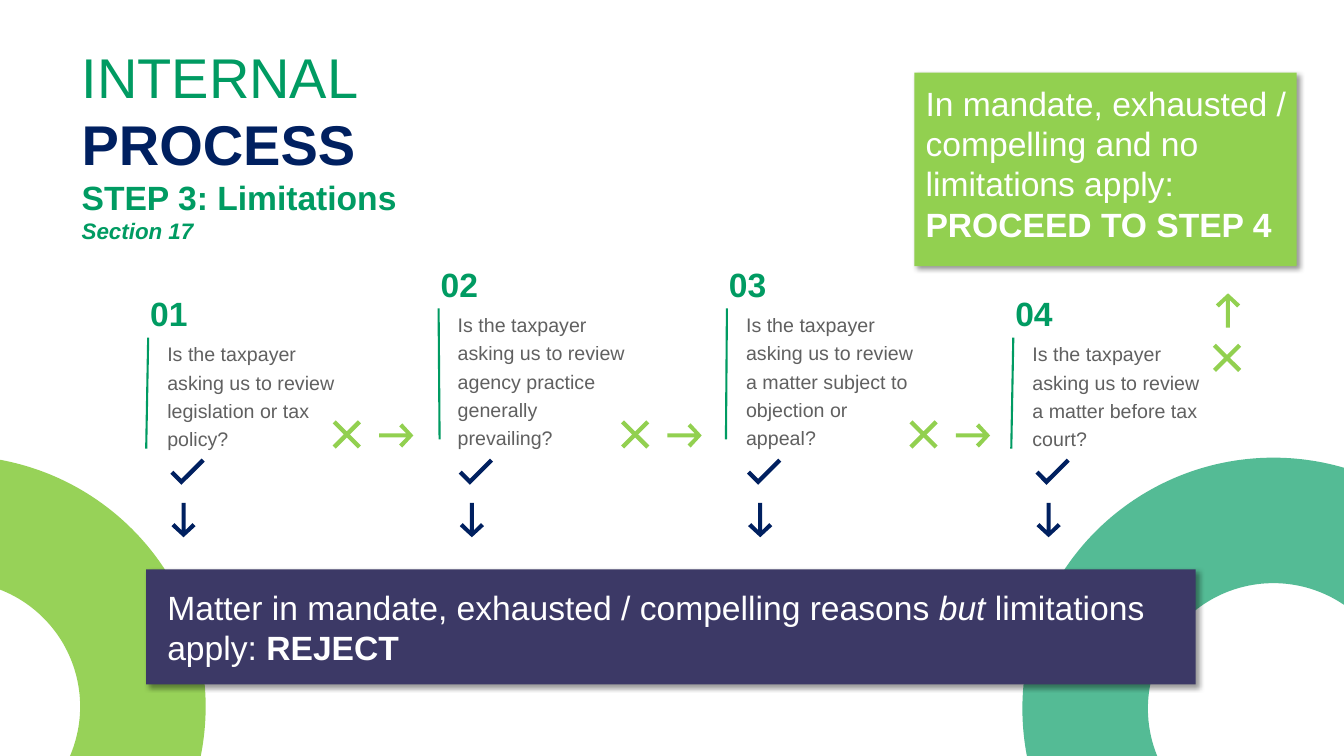
import pptx
import pptx.dml.color
import pptx.enum.dml
import pptx.enum.shapes
import pptx.enum.text
import pptx.oxml
import pptx.oxml.ns
import pptx.util
from pptx.util import Inches

RGBColor = pptx.dml.color.RGBColor
SHAPES = pptx.enum.shapes.MSO_SHAPE
ANCHOR = pptx.enum.text.MSO_ANCHOR

LIME = RGBColor(0x92, 0xD0, 0x50)
GREEN = RGBColor(0x00, 0x9B, 0x62)
NAVY = RGBColor(0x00, 0x20, 0x60)
PURPLE = RGBColor(0x3C, 0x39, 0x66)
INK = RGBColor(0x1D, 0x1D, 0x1D)
WHITE = RGBColor(0xFF, 0xFF, 0xFF)

# Icon outlines, in inches from the icon's centre; the arrow points right.
CROSS = [(0.14, -0.11), (0.11, -0.14), (0, -0.03), (-0.11, -0.14),
         (-0.14, -0.11), (-0.03, 0), (-0.14, 0.11), (-0.11, 0.14),
         (0, 0.03), (0.11, 0.14), (0.14, 0.11), (0.03, 0)]
ARROW = [(-0.17, 0.02), (0.1, 0.02), (0.03, 0.09), (0.06, 0.12), (0.17, 0),
         (0.06, -0.12), (0.03, -0.09), (0.1, -0.02), (-0.17, -0.02)]
CHECK = [(-0.06, 0.07), (-0.14, -0.01), (-0.17, 0.02), (-0.06, 0.13),
         (0.17, -0.1), (0.14, -0.13)]

ICON_PITCH = 2.86

# Number, question, left, top, foot of the rule, sideways lean of the rule
STEPS = [
    ("01", "Is the taxpayer asking us to review legislation or tax policy?",
     1.49, 2.93, 4.45, -0.02),
    ("02", "Is the taxpayer asking us to review agency practice generally prevailing?",
     4.37, 2.64, 4.36, 0.01),
    ("03", "Is the taxpayer asking us to review a matter subject to objection or appeal?",
     7.23, 2.64, 4.36, -0.01),
    ("04", "Is the taxpayer asking us to review a matter before tax court?",
     10.07, 2.93, 4.45, -0.02),
]


def set_opacity(fill, percent):
    color = fill._xPr.find(".//" + pptx.oxml.ns.qn("a:srgbClr"))
    color.append(pptx.oxml.parse_xml(
        f'<a:alpha {pptx.oxml.ns.nsdecls("a")} val="{percent * 1000}"/>'))


def add_text(slide, box, paragraphs, size=24, color=WHITE, bold=False,
             opacity=None, spacing=None, anchor=ANCHOR.TOP,
             insets=(0, 0, 0.1, 0)):
    """Each paragraph is a list of (text, overrides) runs."""
    frame = slide.shapes.add_textbox(*map(Inches, box)).text_frame
    frame.word_wrap = True
    frame.auto_size = pptx.enum.text.MSO_AUTO_SIZE.SHAPE_TO_FIT_TEXT
    frame.vertical_anchor = anchor
    (frame.margin_left, frame.margin_top,
     frame.margin_right, frame.margin_bottom) = map(Inches, insets)
    for index, runs in enumerate(paragraphs):
        paragraph = frame.paragraphs[0] if index == 0 else frame.add_paragraph()
        if spacing:
            paragraph.line_spacing = spacing
        for text, overrides in runs:
            run = paragraph.add_run()
            run.text = text
            font = run.font
            font.name = "Arial"
            font.size = pptx.util.Pt(overrides.get("size", size))
            font.bold = overrides.get("bold", bold)
            font.italic = overrides.get("italic", False)
            font.fill.solid()
            font.fill.fore_color.rgb = overrides.get("color", color)
            if opacity:
                set_opacity(font.fill, opacity)


def paint(shape, color):
    shape.shadow.inherit = False
    shape.fill.solid()
    shape.fill.fore_color.rgb = color
    shape.line.fill.background()


def add_ring(slide, left, top, color, opacity):
    ring = slide.shapes.add_shape(SHAPES.DONUT, Inches(left), Inches(top),
                                  Inches(4.98), Inches(4.98))
    paint(ring, color)
    set_opacity(ring.fill, opacity)


def add_panel(slide, box, color):
    """Rectangle with a soft shadow to the lower right."""
    panel = slide.shapes.add_shape(SHAPES.RECTANGLE, *map(Inches, box))
    paint(panel, color)
    effects = panel._element.spPr.find(pptx.oxml.ns.qn("a:effectLst"))
    effects.append(pptx.oxml.parse_xml(
        f'<a:outerShdw {pptx.oxml.ns.nsdecls("a")} blurRad="50800" dist="38100" '
        'dir="2700000" algn="tl" rotWithShape="0"><a:srgbClr val="000000">'
        '<a:alpha val="40000"/></a:srgbClr></a:outerShdw>'))


def add_icon(slide, outline, x, y, color, rotation=0):
    points = [(Inches(x + dx), Inches(y + dy)) for dx, dy in outline]
    builder = slide.shapes.build_freeform(*points[0])
    builder.add_line_segments(points[1:], close=True)
    icon = builder.convert_to_shape()
    paint(icon, color)
    icon.rotation = rotation


def add_rule(slide, *ends):
    rule = slide.shapes.add_connector(
        pptx.enum.shapes.MSO_CONNECTOR.STRAIGHT, *map(Inches, ends))
    rule.line.color.rgb = GREEN
    rule.line.width = pptx.util.Pt(1.5)
    rule._element.spPr.append(pptx.oxml.parse_xml(
        f'<a:effectLst {pptx.oxml.ns.nsdecls("a")}/>'))


def add_step(slide, number, question, left, top, rule_foot, lean):
    question_top = top + 0.42
    add_text(slide, (left, top, 2.05, 0.42), [[(number, {})]], color=GREEN,
             bold=True, spacing=0.8, anchor=ANCHOR.BOTTOM,
             insets=(0, 0.05, 0.1, 0.05))
    add_text(slide, (left + 0.17, question_top, 1.84, rule_foot - question_top),
             [[(question, {})]], size=14, color=INK, opacity=70, spacing=1.2)
    add_rule(slide, left - 0.02, question_top, left - 0.02 + lean, rule_foot)


def main():
    deck = pptx.Presentation()
    deck.slide_width, deck.slide_height = Inches(13.33), Inches(7.5)
    slide = deck.slides.add_slide(deck.slide_layouts[6])

    add_ring(slide, -2.94, 4.52, LIME, 95)
    add_ring(slide, 10.14, 4.54, GREEN, 67)
    add_text(slide, (0.81, 0.4, 3.32, 2.02), [
        [("INTERNAL ", {"size": 40, "bold": False}),
         ("PROCESS", {"size": 40, "color": NAVY})],
        [("STEP 3: Limitations", {})],
        [("Section 17", {"size": 16, "italic": True})],
    ], color=GREEN, bold=True, anchor=ANCHOR.BOTTOM, insets=(0, 0, 0, 0))

    for index, step in enumerate(STEPS):
        add_step(slide, *step)
        shift = index * ICON_PITCH
        if index < len(STEPS) - 1:
            add_icon(slide, CROSS, 3.44 + shift, 4.31, LIME)
            add_icon(slide, ARROW, 3.93 + shift, 4.32, LIME)
        add_icon(slide, ARROW, 1.82 + shift, 5.16, NAVY, rotation=90)
        add_icon(slide, CHECK, 1.86 + shift, 4.68, NAVY)
    add_icon(slide, CROSS, 12.17, 3.55, LIME)
    add_icon(slide, ARROW, 12.18, 3.08, LIME, rotation=270)

    add_panel(slide, (1.45, 5.65, 10.41, 1.14), PURPLE)
    add_text(slide, (1.66, 5.82, 9.93, 0.81), [[
        ("Matter in mandate, exhausted / compelling reasons ", {}),
        ("but", {"italic": True}),
        (" limitations apply: ", {}),
        ("REJECT", {"bold": True}),
    ]])
    add_panel(slide, (9.07, 0.72, 3.79, 1.92), LIME)
    add_text(slide, (9.18, 0.82, 3.68, 1.62), [
        [("In mandate, exhausted / compelling and no limitations apply:", {})],
        [("PROCEED TO STEP 4", {"bold": True})],
    ])

    deck.save("out.pptx")


if __name__ == "__main__":
    main()
